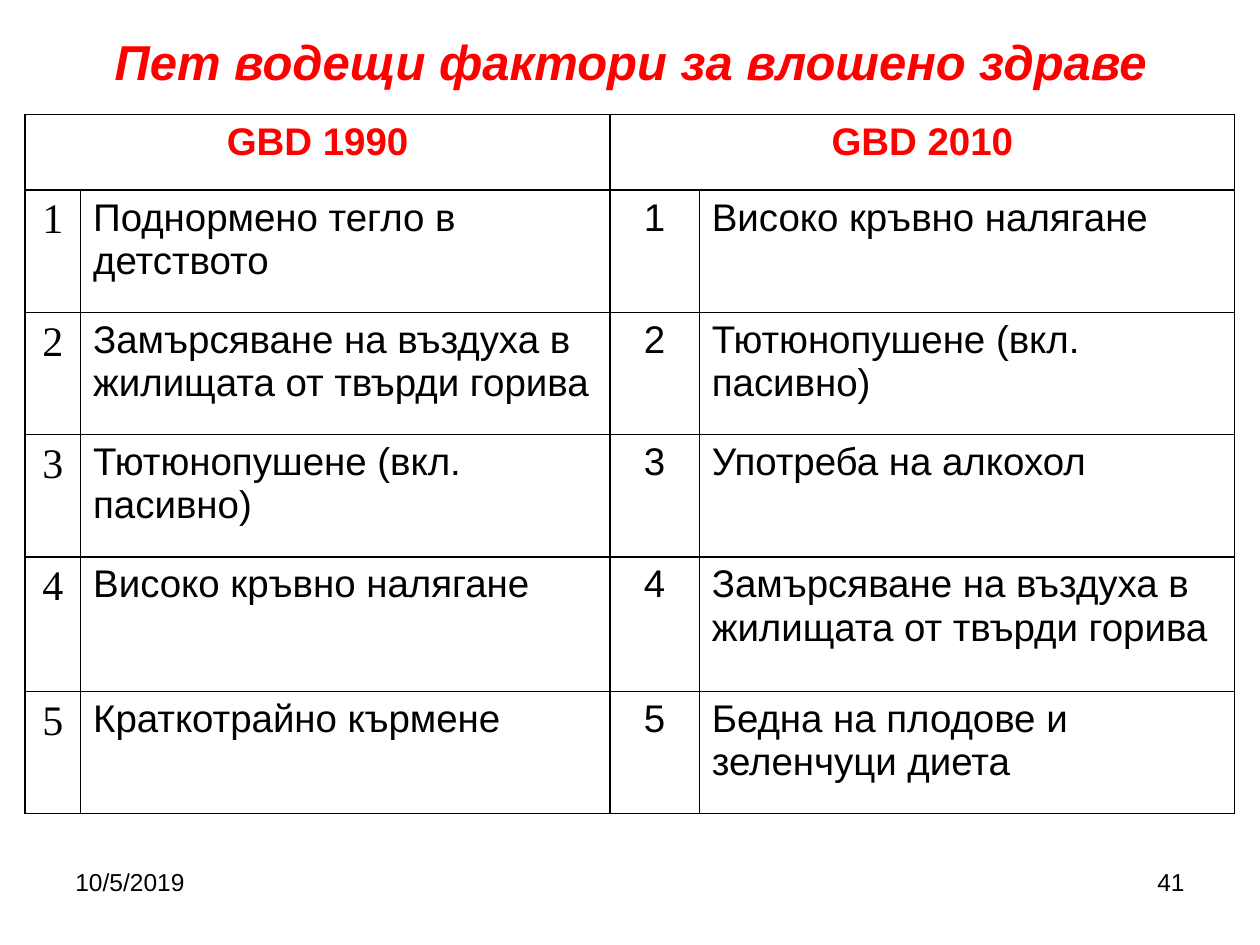
from lxml import etree
from pptx import Presentation
from pptx.dml.color import RGBColor
from pptx.enum import text
from pptx.oxml import ns
from pptx.util import Inches, Pt

RED = RGBColor(0xFF, 0x00, 0x00)
BLACK = RGBColor(0x00, 0x00, 0x00)
LEFT, CENTER, RIGHT = text.PP_ALIGN.LEFT, text.PP_ALIGN.CENTER, text.PP_ALIGN.RIGHT

COLUMNS = [0.44, 4.2, 0.71, 4.25]
ROWS = [0.6, 0.97, 0.97, 0.97, 1.07, 0.97]
HEADERS = ["GBD 1990", "GBD 2010"]
FACTORS = [
    ("Поднормено тегло в детството", "Високо кръвно налягане"),
    ("Замърсяване на въздуха в жилищата от твърди горива", "Тютюнопушене (вкл. пасивно)"),
    ("Тютюнопушене (вкл. пасивно)", "Употреба на алкохол"),
    ("Високо кръвно налягане", "Замърсяване на въздуха в жилищата от твърди горива"),
    ("Краткотрайно кърмене", "Бедна на плодове и зеленчуци диета"),
]


def write(tf, content, size, color=BLACK, align=LEFT, font="Arial", bold=False, italic=False):
    tf.text = content
    p = tf.paragraphs[0]
    p.alignment = align
    f = p.runs[0].font
    f.name, f.size, f.bold, f.italic = font, Pt(size), bold, italic
    f.color.rgb = color


def add_title(slide, content):
    sp = slide.shapes.title
    sp.left, sp.top, sp.width, sp.height = map(Inches, (0.2, 0.2, 9.61, 0.57))
    tf = sp.text_frame
    tf.auto_size = text.MSO_AUTO_SIZE.NONE
    tf.vertical_anchor = text.MSO_ANCHOR.MIDDLE
    write(tf, content, 28, RED, CENTER, bold=True, italic=True)


def add_footer(slide, left, content, align):
    sp = slide.shapes.add_textbox(Inches(left), Inches(6.83), Inches(2.33), Inches(0.52))
    sp.text_frame.word_wrap = True
    write(sp.text_frame, content, 14, align=align)


def format_cell(cell):
    tc_pr = cell._tc.get_or_add_tcPr()
    for side in ("lnL", "lnR", "lnT", "lnB"):
        ln = etree.SubElement(tc_pr, ns.qn(f"a:{side}"), w=str(Pt(1)))
        fill = etree.SubElement(ln, ns.qn("a:solidFill"))
        etree.SubElement(fill, ns.qn("a:srgbClr"), val=str(BLACK))
    cell.fill.background()


def add_factor_table(slide):
    frame = slide.shapes.add_table(len(ROWS), len(COLUMNS), Inches(0.2), Inches(0.91),
                                   Inches(sum(COLUMNS)), Inches(sum(ROWS)))
    table = frame.table
    table.first_row = table.horz_banding = False
    for column, width in zip(table.columns, COLUMNS):
        column.width = Inches(width)
    for row, height in zip(table.rows, ROWS):
        row.height = Inches(height)
    for cell in table.iter_cells():
        format_cell(cell)
    for i, header in enumerate(HEADERS):
        cell = table.cell(0, 2 * i)
        cell.merge(table.cell(0, 2 * i + 1))
        write(cell.text_frame, header, 22, RED, CENTER, bold=True)
    for rank, (factor_1990, factor_2010) in enumerate(FACTORS, 1):
        number_1990, name_1990, number_2010, name_2010 = (
            cell.text_frame for cell in table.rows[rank].cells)
        write(number_1990, str(rank), 24, align=CENTER, font="Times New Roman")
        write(name_1990, factor_1990, 22)
        write(number_2010, str(rank), 22, align=CENTER)
        write(name_2010, factor_2010, 22)


def main():
    prs = Presentation()
    prs.slide_width, prs.slide_height = Inches(10), Inches(7.5)
    slide = prs.slides.add_slide(prs.slide_layouts[5])
    add_title(slide, "Пет водещи фактори за влошено здраве")
    add_factor_table(slide)
    add_footer(slide, 0.5, "10/5/2019", LEFT)
    add_footer(slide, 7.17, "41", RIGHT)
    prs.save("out.pptx")


if __name__ == "__main__":
    main()
